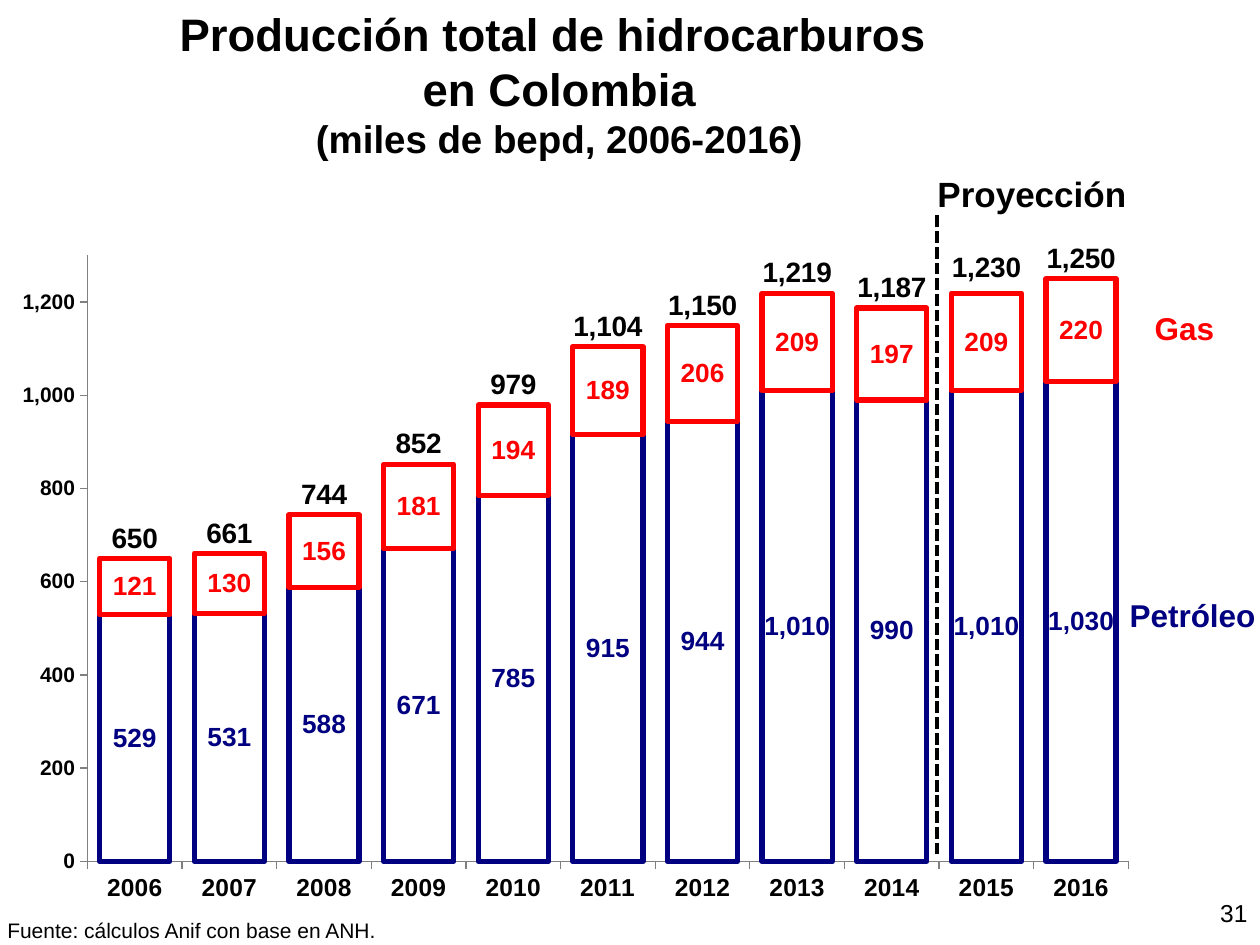
from lxml.etree import SubElement
from pptx import Presentation
from pptx.chart.data import CategoryChartData
from pptx.dml.color import RGBColor
from pptx.enum.chart import XL_CHART_TYPE, XL_LABEL_POSITION, XL_MARKER_STYLE, XL_TICK_MARK
from pptx.enum.dml import MSO_LINE
from pptx.enum.shapes import MSO_CONNECTOR
from pptx.enum.text import MSO_ANCHOR, MSO_AUTO_SIZE, PP_ALIGN
from pptx.oxml import parse_xml
from pptx.oxml.ns import nsdecls, qn
from pptx.util import Inches, Pt

BLACK = RGBColor(0, 0, 0)
NAVY = RGBColor(0, 0, 0x80)
RED = RGBColor(0xFF, 0, 0)
GRAY = RGBColor(0x80, 0x80, 0x80)


def style(font, size, color=BLACK, bold=True):
    look = {"name": "Arial", "size": Pt(size), "bold": bold}
    for key, val in look.items():
        setattr(font, key, val)
    font.color.rgb = color


def fill_text(shape, lines, align, color=BLACK, bold=True, inset=None):
    """Write (text, size) lines, one paragraph each, from the top of the shape."""
    frame = shape.text_frame
    look = {"word_wrap": True, "auto_size": MSO_AUTO_SIZE.NONE,
            "vertical_anchor": MSO_ANCHOR.TOP}
    if inset is not None:
        for side in ("left", "top", "right", "bottom"):
            look["margin_" + side] = Inches(inset)
    for key, val in look.items():
        setattr(frame, key, val)
    for i, (text, size) in enumerate(lines):
        para = frame.add_paragraph() if i else frame.paragraphs[0]
        para.alignment = align
        run = para.add_run()
        run.text = text
        style(run.font, size, color, bold)


deck = Presentation()
deck.slide_width, deck.slide_height = Inches(10), Inches(7.5)
slide = deck.slides.add_slide(deck.slide_layouts[5])

# Title
title = slide.shapes.title
box = {"left": 0.83, "top": 0.05, "width": 7.22, "height": 1.72}
for key, val in box.items():
    setattr(title, key, Inches(val))
fill_text(title, [("Producción total de hidrocarburos ", 26), ("en Colombia", 26),
                  ("(miles de bepd, 2006-2016)", 22)], PP_ALIGN.CENTER, inset=0)

# Stacked columns with the totals above them
data = CategoryChartData(number_format="#,##0")
data.categories = [str(year) for year in range(2006, 2017)]
data.add_series("Petróleo", [529, 531, 588, 671, 785, 915, 944, 1010, 990, 1010, 1030])
data.add_series("Gas", [121, 130, 156, 181, 194, 189, 206, 209, 197, 209, 220])
data.add_series("Total", [650, 661, 744, 852, 979, 1104, 1150, 1219, 1187, 1230, 1250])
chart = slide.shapes.add_chart(
    XL_CHART_TYPE.COLUMN_STACKED, Inches(0.11), Inches(1.62),
    Inches(8.99), Inches(5.58), data).chart
chart.has_legend = False
chart.has_title = False
style(chart.font, 10, bold=False)

# The total becomes a line plot on the same axes
area = chart._chartSpace.chart.plotArea
bars = area.find(qn("c:barChart"))
total = bars.findall(qn("c:ser"))[-1]
for flag in total.findall(qn("c:invertIfNegative")):
    total.remove(flag)
line = parse_xml(f'<c:lineChart {nsdecls("c")}><c:grouping val="standard"/>'
                 '<c:varyColors val="0"/></c:lineChart>')
line.append(total)
for axis in bars.findall(qn("c:axId")):
    SubElement(line, qn("c:axId")).set("val", axis.get("val"))
bars.addnext(line)

# Fixed place of the plot inside the chart
for old in area.findall(qn("c:layout")):
    area.remove(old)
layout = parse_xml(f'<c:layout {nsdecls("c")}><c:manualLayout/></c:layout>')
place = {"layoutTarget": "inner", "xMode": "edge", "yMode": "edge",
         "x": "0.065", "y": "0.073", "w": "0.919", "h": "0.862"}
for key, val in place.items():
    SubElement(layout[0], qn("c:" + key)).set("val", val)
area.insert(0, layout)

cols, sums = chart.plots
cols.gap_width, cols.overlap = 35, 100
cols.vary_by_categories = False
for row, color in zip(cols.series, (NAVY, RED)):
    row.format.fill.background()
    row.format.line.color.rgb = color
    row.format.line.width = Pt(3)
sums = sums.series[0]
sums.smooth = False
sums.format.line.fill.background()
sums.marker.style = XL_MARKER_STYLE.NONE

for row, size, color, spot in (
        (cols.series[0], 15, NAVY, XL_LABEL_POSITION.CENTER),
        (cols.series[1], 15, RED, XL_LABEL_POSITION.CENTER),
        (sums, 16, BLACK, XL_LABEL_POSITION.ABOVE)):
    labels = row.data_labels
    look = {"show_value": True, "position": spot, "number_format": "#,##0",
            "number_format_is_linked": False}
    for key, val in look.items():
        setattr(labels, key, val)
    style(labels.font, size, color)

for axis, size in ((chart.category_axis, 14), (chart.value_axis, 12)):
    axis.has_major_gridlines = False
    axis.major_tick_mark = XL_TICK_MARK.OUTSIDE
    axis.format.line.color.rgb = GRAY
    style(axis.tick_labels.font, size)
scale = {"minimum_scale": 0, "maximum_scale": 1300, "major_unit": 200}
for key, val in scale.items():
    setattr(chart.value_axis, key, val)
ticks = chart.value_axis.tick_labels
ticks.number_format, ticks.number_format_is_linked = "#,##0", False

# Captions: text, place, size, alignment, colour, bold, inset
for text, spot, size, align, color, bold, inset in (
        ("31", (9.33, 7.08, 0.67, 0.42), 14, PP_ALIGN.RIGHT, BLACK, False, None),
        ("Fuente: cálculos Anif con base en ANH.", (-0.04, 7.23, 3.2, 0.3), 12,
         PP_ALIGN.LEFT, BLACK, False, None),
        ("Proyección", (7.44, 1.37, 1.76, 0.34), 20, PP_ALIGN.LEFT, BLACK, True, 0),
        ("Petróleo", (8.66, 4.68, 1.61, 0.4), 18, PP_ALIGN.CENTER, NAVY, True, None),
        ("Gas", (8.78, 2.4, 1.24, 0.4), 18, PP_ALIGN.CENTER, RED, True, None)):
    note = slide.shapes.add_textbox(*map(Inches, spot))
    fill_text(note, [(text, size)], align, color, bold, inset)

# Start of the projection
split = slide.shapes.add_connector(
    MSO_CONNECTOR.STRAIGHT, Inches(7.44), Inches(6.78), Inches(7.44), Inches(1.7))
split.line.color.rgb = BLACK
split.line.width = Pt(2.25)
split.line.dash_style = MSO_LINE.SQUARE_DOT
SubElement(split._element.spPr, qn("a:effectLst"))

deck.save("out.pptx")
